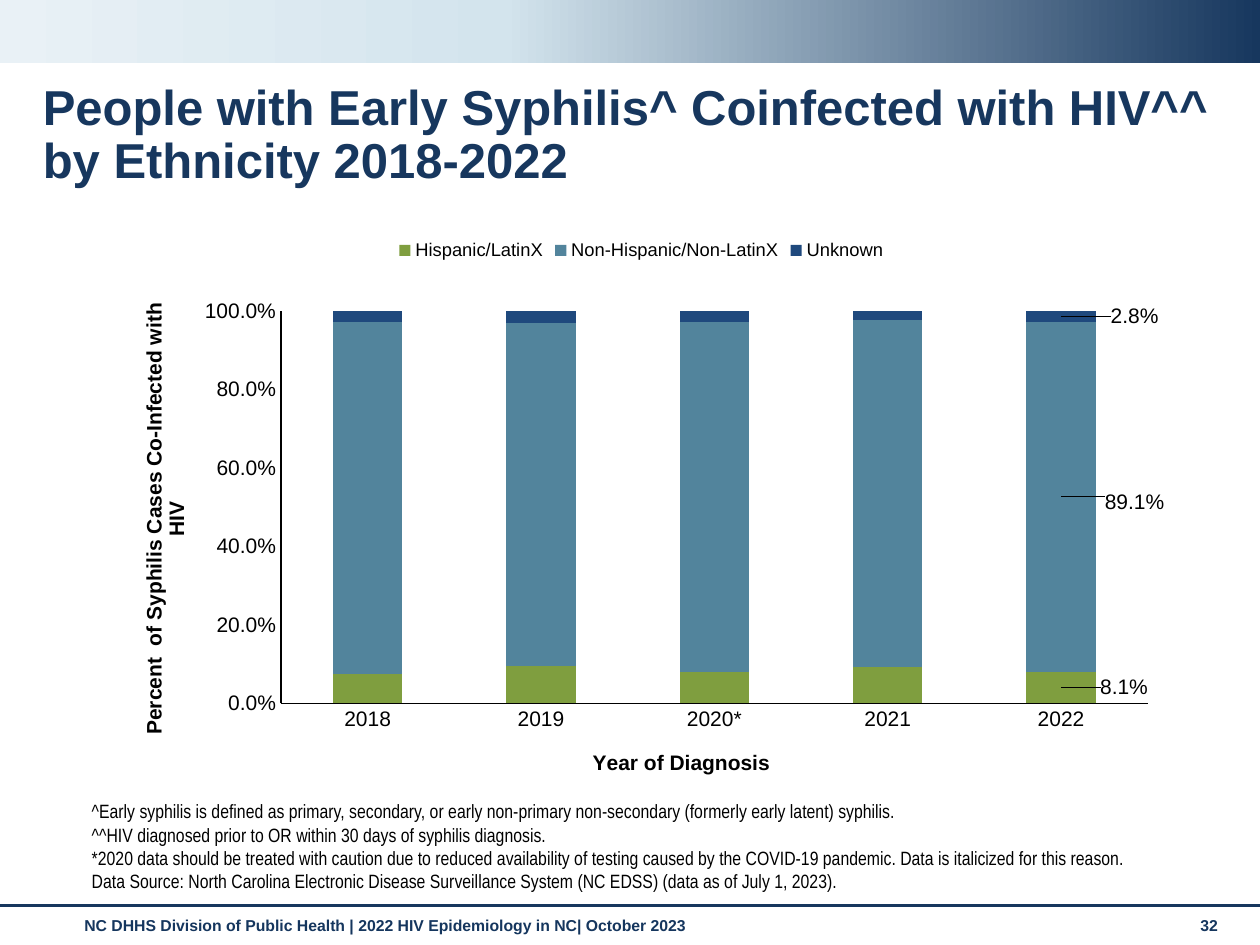
from lxml.etree import SubElement
from pptx import Presentation
from pptx.chart.data import CategoryChartData
from pptx.dml.color import RGBColor
from pptx.enum.chart import XL_CHART_TYPE, XL_LABEL_POSITION, XL_LEGEND_POSITION, XL_TICK_MARK
from pptx.enum.shapes import MSO_CONNECTOR, MSO_SHAPE
from pptx.enum.text import MSO_ANCHOR, MSO_AUTO_SIZE, PP_ALIGN
from pptx.oxml import parse_xml
from pptx.oxml.ns import nsdecls, qn
from pptx.util import Cm, Pt

COLORS = {
    "navy": "17375E",
    "footer": "15365E",
    "ice": "D3E4ED",
    "mist": "E9F1F6",
    "black": "000000",
    "green": "7F9E3F",
    "teal": "52849C",
    "blue": "1F497D",
}
YEARS = ["2018", "2019", "2020*", "2021", "2022"]
SERIES = [
    ("Hispanic/LatinX", [0.074, 0.095, 0.081, 0.094, 0.081], "green", (0.06, 0)),
    ("Non-Hispanic/Non-LatinX", [0.897, 0.875, 0.892, 0.883, 0.891], "teal", (0.07, 0.01)),
    ("Unknown", [0.029, 0.03, 0.027, 0.023, 0.028], "blue", (0.07, 0)),
]
FOOTNOTES = [
    "^Early syphilis is defined as primary, secondary, or early non-primary non-secondary "
    "(formerly early latent) syphilis.",
    "^^HIV diagnosed prior to OR within 30 days of syphilis diagnosis.",
    "*2020 data should be treated with caution due to reduced availability of testing caused by "
    "the COVID-19 pandemic. Data is italicized for this reason.",
    "Data Source: North Carolina Electronic Disease Surveillance System (NC EDSS) "
    "(data as of July 1, 2023).",
]


def rgb(name):
    return RGBColor.from_string(COLORS[name])


def style_font(font, size, color="black", bold=False, name="Arial"):
    font.size = Pt(size)
    font.name = name
    font.bold = bold
    font.color.rgb = rgb(color)


def add_text(slide, box, lines, size, color, bold=False, name="Arial", anchor=MSO_ANCHOR.TOP):
    text_frame = slide.shapes.add_textbox(*map(Cm, box)).text_frame
    text_frame.word_wrap = True
    text_frame.vertical_anchor = anchor
    text_frame.text = "\n".join(lines)
    for paragraph in text_frame.paragraphs:
        style_font(paragraph.runs[0].font, size, color, bold, name)


def add_banner(slide):
    banner = slide.shapes.add_shape(MSO_SHAPE.RECTANGLE, 0, 0, Cm(25.4), Cm(1.27))
    banner.shadow.inherit = False
    banner.line.fill.background()
    banner.fill.gradient()
    gradient = banner._element.spPr.find(qn("a:gradFill"))
    stops = gradient.find(qn("a:gsLst"))
    for stop in list(stops):
        stops.remove(stop)
    for position, color in ((0, "navy"), (60, "ice"), (100, "mist")):
        stop = SubElement(stops, qn("a:gs"), pos=str(position * 1000))
        SubElement(stop, qn("a:srgbClr"), val=COLORS[color])
    gradient.find(qn("a:lin")).set("ang", str(180 * 60000))


def add_footer_line(slide):
    line = slide.shapes.add_connector(MSO_CONNECTOR.STRAIGHT, 0, Cm(18.26), Cm(25.4), Cm(18.26))
    line.line.color.rgb = rgb("navy")
    line.line.width = Pt(1.75)
    SubElement(line._element.spPr, qn("a:effectLst"))


def set_title(slide, text):
    title = slide.shapes.title
    title.left, title.top, title.width, title.height = map(Cm, (0.61, 1.55, 24.64, 1.52))
    text_frame = title.text_frame
    text_frame.text = text
    text_frame.word_wrap = True
    text_frame.auto_size = MSO_AUTO_SIZE.NONE
    text_frame.vertical_anchor = MSO_ANCHOR.TOP
    paragraph = text_frame.paragraphs[0]
    paragraph.alignment = PP_ALIGN.LEFT
    paragraph.line_spacing = 0.9
    style_font(paragraph.runs[0].font, 28, "navy", True)


def set_layout(parent, index, **values):
    for layout in parent.findall(qn("c:layout")):
        parent.remove(layout)
    layout = parse_xml(f"<c:layout {nsdecls('c')}><c:manualLayout/></c:layout>")
    for tag, value in values.items():
        SubElement(layout[0], qn(f"c:{tag}"), val=str(value))
    parent.insert(index, layout)


def format_axis(axis, title, x, y):
    axis.has_major_gridlines = False
    axis.major_tick_mark = XL_TICK_MARK.NONE
    axis.minor_tick_mark = XL_TICK_MARK.NONE
    axis.format.line.color.rgb = rgb("black")
    axis.format.line.width = Pt(0.75)
    style_font(axis.tick_labels.font, 12)
    text_frame = axis.axis_title.text_frame
    text_frame.text = title
    style_font(text_frame.paragraphs[0].runs[0].font, 12, bold=True)
    set_layout(axis.axis_title._element, 1, xMode="edge", yMode="edge", x=x, y=y)


def format_series(series, color, offset):
    series.format.fill.solid()
    series.format.fill.fore_color.rgb = rgb(color)
    series.data_labels.show_value = False
    label = series.points[len(YEARS) - 1].data_label
    style_font(label.font, 12)
    label.position = XL_LABEL_POSITION.CENTER
    x, y = offset
    set_layout(series._element.find(".//" + qn("c:dLbl")), 1, x=x, y=y)


def add_ethnicity_chart(slide):
    data = CategoryChartData(number_format="0.0%")
    data.categories = YEARS
    for name, values, _, _ in SERIES:
        data.add_series(name, values)
    box = map(Cm, (2.34, 4.55, 21.18, 11.4))
    chart = slide.shapes.add_chart(XL_CHART_TYPE.COLUMN_STACKED, *box, data).chart
    style_font(chart.font, 10)
    chart.has_title = False
    chart.has_legend = True
    chart.legend.position = XL_LEGEND_POSITION.TOP
    chart.legend.include_in_layout = False
    style_font(chart.legend.font, 10.5)

    plot = chart.plots[0]
    plot.gap_width = 150
    plot.overlap = 100
    plot.vary_by_categories = False
    for series, (_, _, color, offset) in zip(plot.series, SERIES):
        format_series(series, color, offset)

    format_axis(chart.category_axis, "Year of Diagnosis", 0.45, 0.92)
    value_axis = chart.value_axis
    format_axis(value_axis, "Percent  of Syphilis Cases Co-Infected with HIV", 0.02, 0.13)
    body = value_axis.axis_title._element.find(".//" + qn("a:bodyPr"))
    body.set("rot", "-5400000")
    body.set("vert", "horz")
    value_axis.minimum_scale = 0
    value_axis.maximum_scale = 1
    value_axis.major_unit = 0.2
    value_axis.tick_labels.number_format = "0.0%"
    value_axis.tick_labels.number_format_is_linked = False
    set_layout(
        chart._chartSpace.find(".//" + qn("c:plotArea")), 0,
        layoutTarget="inner", xMode="edge", yMode="edge", x=0.157, y=0.151, w=0.825, h=0.694,
    )


def main():
    presentation = Presentation()
    presentation.slide_width = Cm(25.4)
    presentation.slide_height = Cm(19.05)
    slide = presentation.slides.add_slide(presentation.slide_layouts[5])
    footer = "NC DHHS Division of Public Health | 2022 HIV Epidemiology in NC| October 2023"
    add_text(slide, (1.45, 18.34, 22.2, 0.74), [footer], 9, "footer", True)
    add_text(slide, (23.95, 18.34, 1.12, 0.74), ["32"], 9, "footer", True)
    add_banner(slide)
    add_footer_line(slide)
    set_title(slide, "People with Early Syphilis^ Coinfected with HIV^^ by Ethnicity 2018-2022")
    add_text(slide, (1.6, 16.51, 22.2, 1.6), FOOTNOTES, 11, "black",
             name="Arial Narrow", anchor=MSO_ANCHOR.BOTTOM)
    add_ethnicity_chart(slide)
    presentation.save("out.pptx")


if __name__ == "__main__":
    main()
